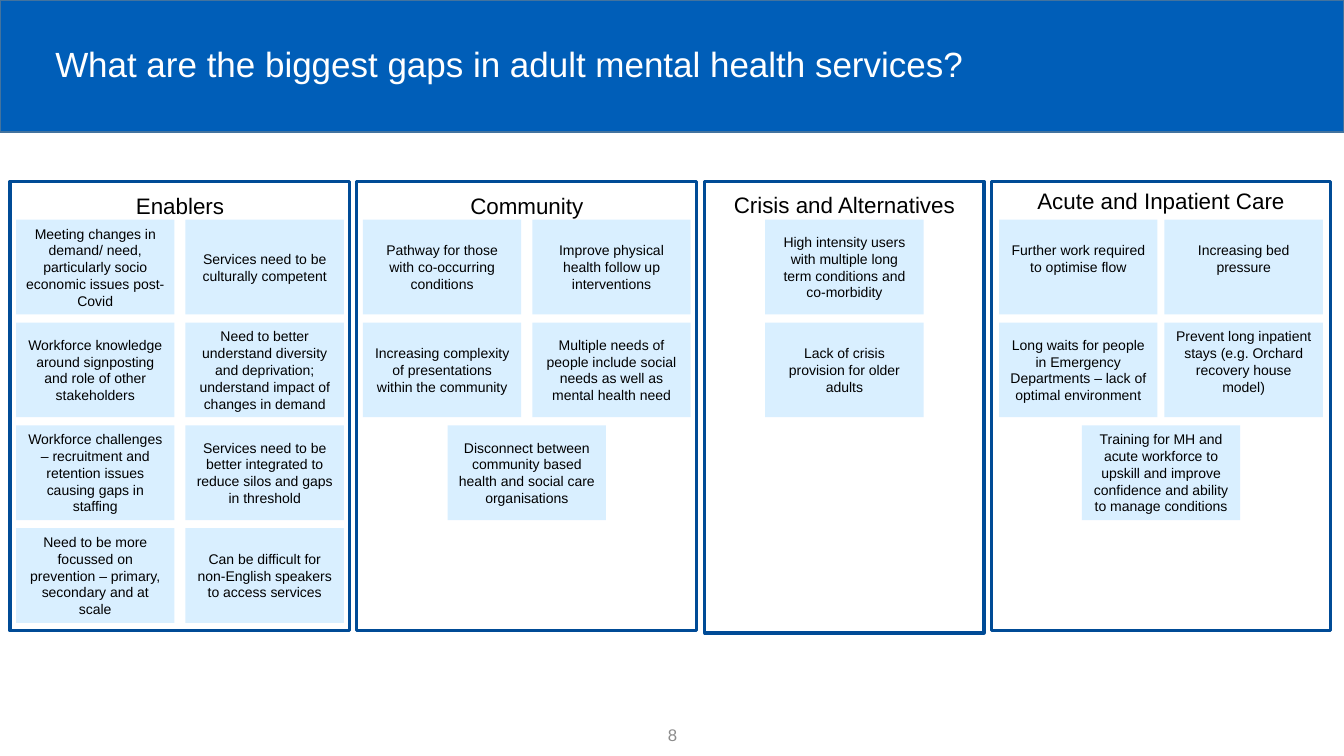
from dataclasses import dataclass

from pptx import Presentation
from pptx.dml.color import RGBColor
from pptx.enum.shapes import MSO_SHAPE
from pptx.enum.text import MSO_ANCHOR, PP_ALIGN
from pptx.util import Inches, Pt

COLOURS = {
    "banner": "005EB8",
    "banner_edge": "43739E",
    "panel_edge": "004B96",
    "card": "D9EFFF",
    "text": "000000",
    "title": "FFFFFF",
    "number": "8C8C8C",
}
FONT = "Arial"
CARD_WIDTH, CARD_HEIGHT = 1.57, 0.94
FIRST_ROW, ROW_PITCH = 2.18, 1.02
PANEL_TOP = 1.8
RAISED_INSET = 0.22  # bottom inset that lifts card text by half a line


@dataclass
class Column:
    heading: str
    left: float
    width: float
    height: float
    heading_top: float
    heading_width: float
    card_gap: float
    rows: list
    raised: tuple = ()  # (row, position) of cards with lifted text


COLUMNS = [
    Column("Enablers", 0.1, 3.37, 4.46, 1.85, 2.19, 0.11, [
        ["Meeting changes in demand/ need, particularly socio economic issues post-Covid",
         "Services need to be culturally competent"],
        ["Workforce knowledge around signposting and role of other stakeholders",
         "Need to better understand diversity and deprivation; "
         "understand impact of changes in demand"],
        ["Workforce challenges – recruitment and retention issues causing gaps in staffing",
         "Services need to be better integrated to reduce silos and gaps in threshold"],
        ["Need to be more focussed on prevention – primary, secondary and at scale",
         "Can be difficult for non-English speakers to access services"],
    ]),
    Column("Community", 3.54, 3.37, 4.46, 1.85, 2.19, 0.11, [
        ["Pathway for those with co-occurring conditions",
         "Improve physical health follow up interventions"],
        ["Increasing complexity of presentations within the community",
         "Multiple needs of people include social needs as well as mental health need"],
        ["Disconnect between community based health and social care organisations"],
    ]),
    Column("Crisis and Alternatives", 6.99, 2.77, 4.48, 1.84, 2.6, 0, [
        ["High intensity users with multiple long term conditions and co-morbidity"],
        ["Lack of crisis provision for older adults"],
    ]),
    Column("Acute and Inpatient Care", 9.83, 3.37, 4.46, 1.8, 2.77, 0.07, [
        ["Further work required to optimise flow", "Increasing bed pressure"],
        ["Long waits for people in Emergency Departments – lack of optimal environment",
         "Prevent long inpatient stays (e.g. Orchard recovery house model)"],
        ["Training for MH and acute workforce to upskill and improve "
         "confidence and ability to manage conditions"],
    ], raised=((0, 0), (0, 1), (1, 1))),
]


def colour(name):
    return RGBColor.from_string(COLOURS[name])


def write(box, text, size, colour_name, align=PP_ALIGN.CENTER):
    frame = box.text_frame
    frame.word_wrap = True
    frame.vertical_anchor = MSO_ANCHOR.MIDDLE
    para = frame.paragraphs[0]
    para.alignment = align
    span = para.add_run()
    span.text = text
    span.font.name = FONT
    span.font.size = Pt(size)
    span.font.color.rgb = colour(colour_name)
    return para


def add_label(page, text, left, top, width, height, size, colour_name, align=PP_ALIGN.CENTER):
    box = page.shapes.add_textbox(Inches(left), Inches(top), Inches(width), Inches(height))
    return write(box, text, size, colour_name, align)


def add_rectangle(page, left, top, width, height, fill=None, edge=None, edge_width=1):
    box = page.shapes.add_shape(MSO_SHAPE.RECTANGLE, Inches(left), Inches(top),
                                Inches(width), Inches(height))
    box.shadow.inherit = False
    if fill:
        box.fill.solid()
        box.fill.fore_color.rgb = colour(fill)
    else:
        box.fill.background()
    if edge:
        box.line.color.rgb = colour(edge)
        box.line.width = Pt(edge_width)
    else:
        box.line.fill.background()
    return box


def add_column(page, column):
    """Draw one framed column; each row of cards is centred in its frame."""
    centre = column.left + column.width / 2
    add_rectangle(page, column.left, PANEL_TOP, column.width, column.height,
                  edge="panel_edge", edge_width=2.25)
    add_label(page, column.heading, centre - column.heading_width / 2, column.heading_top,
              column.heading_width, 0.37, 16, "text")
    for row, texts in enumerate(column.rows):
        pitch = CARD_WIDTH + column.card_gap
        row_left = centre - (CARD_WIDTH + (len(texts) - 1) * pitch) / 2
        for position, text in enumerate(texts):
            card = add_rectangle(page, row_left + position * pitch, FIRST_ROW + row * ROW_PITCH,
                                 CARD_WIDTH, CARD_HEIGHT, fill="card")
            write(card, text, 10, "text")
            if (row, position) in column.raised:
                card.text_frame.margin_bottom = Inches(RAISED_INSET)


def main():
    deck = Presentation()
    deck.slide_width, deck.slide_height = Inches(13.33), Inches(7.5)
    page = deck.slides.add_slide(deck.slide_layouts[6])
    add_rectangle(page, 0, 0, 13.33, 1.31, fill="banner", edge="banner_edge")
    title = add_label(page, "What are the biggest gaps in adult mental health services?",
                      0.45, 0.36, 12.44, 0.59, 25, "title", PP_ALIGN.LEFT)
    title.line_spacing = 0.9
    for column in COLUMNS:
        add_column(page, column)
    add_label(page, "8", 5.17, 7.09, 3, 0.4, 12, "number")
    deck.save("out.pptx")


if __name__ == "__main__":
    main()
